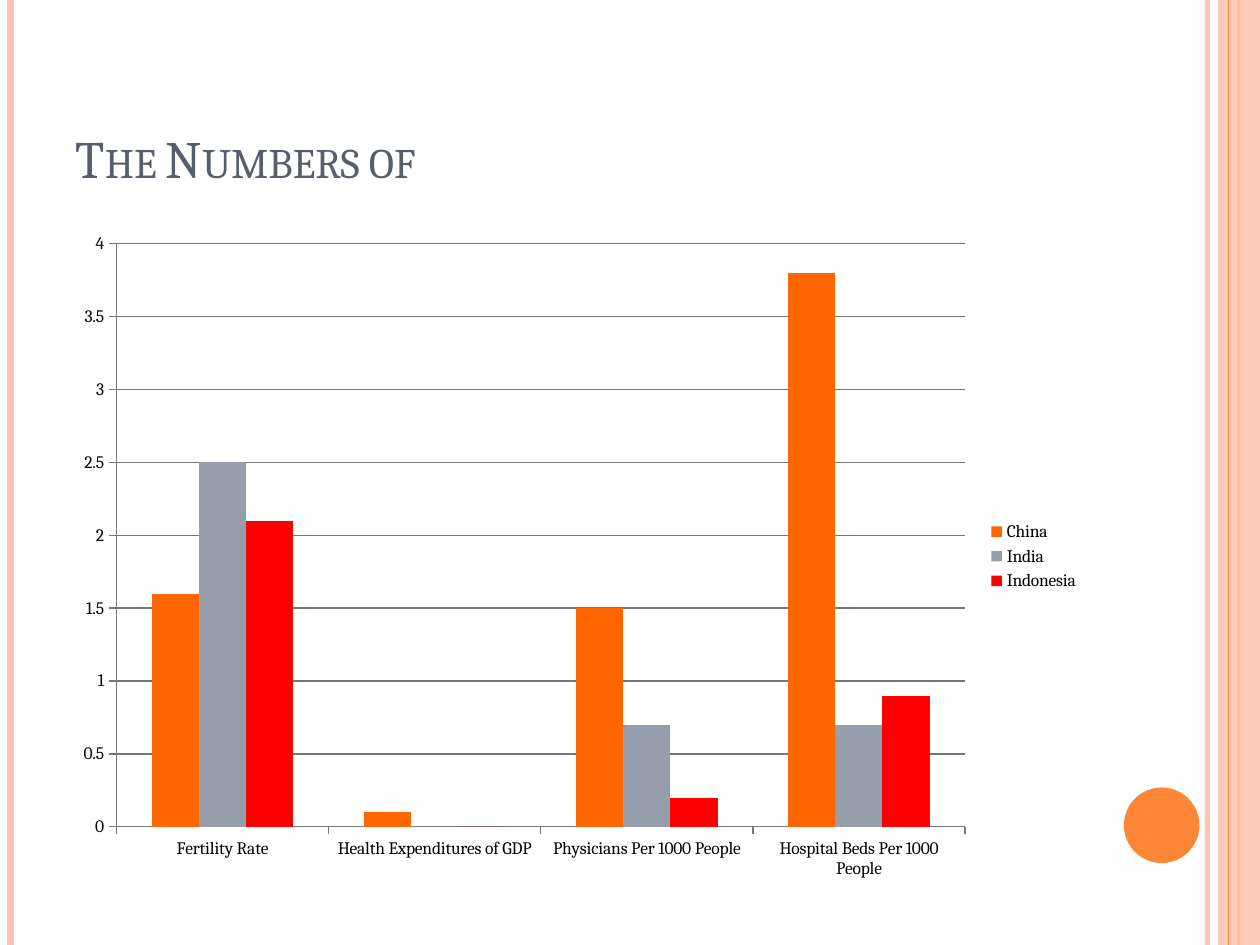
from dataclasses import dataclass
from typing import Optional

from lxml import etree
from pptx import Presentation
from pptx.chart.data import CategoryChartData
from pptx.dml.color import RGBColor
from pptx.enum.chart import XL_CHART_TYPE, XL_LEGEND_POSITION, XL_TICK_MARK
from pptx.enum.shapes import MSO_CONNECTOR, MSO_SHAPE
from pptx.enum.text import MSO_ANCHOR, MSO_AUTO_SIZE, PP_ALIGN
from pptx.oxml.ns import qn
from pptx.util import Pt

COLUMNS = XL_CHART_TYPE.COLUMN_CLUSTERED
LEGEND_RIGHT = XL_LEGEND_POSITION.RIGHT
TICK_OUT, TICK_NONE = XL_TICK_MARK.OUTSIDE, XL_TICK_MARK.NONE
STRAIGHT = MSO_CONNECTOR.STRAIGHT
RECT, OVAL = MSO_SHAPE.RECTANGLE, MSO_SHAPE.OVAL
BOTTOM, LEFT, NO_FIT = MSO_ANCHOR.BOTTOM, PP_ALIGN.LEFT, MSO_AUTO_SIZE.NONE

PEACH = RGBColor(0xFE, 0xC3, 0xAE)
ORANGE = RGBColor(0xFE, 0x86, 0x37)
SLATE = RGBColor(0x57, 0x5F, 0x6D)
BLACK = RGBColor(0, 0, 0)
AXIS_GRAY = RGBColor(0x77, 0x77, 0x77)
CHINA = RGBColor(0xFF, 0x66, 0x00)
INDIA = RGBColor(0x96, 0x9E, 0xAB)
INDONESIA = RGBColor(0xFF, 0, 0)

FONT = "Cambria"
WIDTH, HEIGHT = 720, 540


@dataclass
class Stripe:
    x: float
    weight: float
    color: RGBColor
    opacity: Optional[int] = None


@dataclass
class Block:
    kind: MSO_SHAPE
    x: float
    y: float
    w: float
    h: float
    color: RGBColor
    opacity: Optional[int] = None


@dataclass
class Country:
    name: str
    values: tuple[float, ...]
    color: RGBColor


BACK_STRIPES = [
    Stripe(690, 3, PEACH, 93),
    Stripe(6, 4.5, PEACH),
    Stripe(707.76, 1.5, ORANGE),
]
SIDE_BAND = Block(RECT, 696, 0, 24, HEIGHT, PEACH, 87)
FRONT_STRIPE = Stripe(702, 0.75, ORANGE)
DISC = Block(OVAL, 642.24, 450, 43.2, 43.2, ORANGE)

CATEGORIES = (
    "Fertility Rate",
    "Health Expenditures of GDP",
    "Physicians Per 1000 People",
    "Hospital Beds Per 1000 People",
)
COUNTRIES = [
    Country("China", (1.6, 0.1, 1.5, 3.8), CHINA),
    Country("India", (2.5, 0, 0.7, 0.7), INDIA),
    Country("Indonesia", (2.1, 0, 0.2, 0.9), INDONESIA),
]


def set_opacity(sp_pr, percent: Optional[int]) -> None:
    if percent is not None:
        color = next(sp_pr.iter(qn("a:srgbClr")))
        etree.SubElement(color, qn("a:alpha"), val=str(percent * 1000))


def draw_stripe(slide, stripe: Stripe) -> None:
    line = slide.shapes.add_connector(
        STRAIGHT, Pt(stripe.x), Pt(0), Pt(stripe.x), Pt(HEIGHT))
    line.line.color.rgb = stripe.color
    line.line.width = Pt(stripe.weight)
    sp_pr = line._element.spPr
    set_opacity(sp_pr, stripe.opacity)
    etree.SubElement(sp_pr, qn("a:effectLst"))


def draw_block(slide, block: Block) -> None:
    sp = slide.shapes.add_shape(
        block.kind, Pt(block.x), Pt(block.y), Pt(block.w), Pt(block.h))
    sp.fill.solid()
    sp.fill.fore_color.rgb = block.color
    sp.line.fill.background()
    sp.shadow.inherit = False
    set_opacity(sp._element.spPr, block.opacity)


def set_title(slide, text: str) -> None:
    title = slide.shapes.title
    title.left, title.top = Pt(36), Pt(21.6)
    title.width, title.height = Pt(588), Pt(90)
    tf = title.text_frame
    tf.text = text
    tf.vertical_anchor = BOTTOM
    tf.auto_size = NO_FIT
    p = tf.paragraphs[0]
    p.alignment = LEFT
    p.font.name = FONT
    p.font.size = Pt(30)
    p.font.color.rgb = SLATE
    p.runs[0].font._element.set("cap", "small")


def style_axis(axis) -> None:
    axis.major_tick_mark = TICK_OUT
    axis.minor_tick_mark = TICK_NONE
    axis.format.line.color.rgb = AXIS_GRAY
    axis.format.line.width = Pt(0.75)


def draw_chart(slide) -> None:
    data = CategoryChartData()
    data.categories = CATEGORIES
    for country in COUNTRIES:
        data.add_series(country.name, country.values)
    chart = slide.shapes.add_chart(
        COLUMNS, Pt(36), Pt(126), Pt(588), Pt(383.76), data).chart
    chart.has_title = False
    chart.font.name = FONT
    chart.font.size = Pt(10)
    chart.font.color.rgb = BLACK
    chart.has_legend = True
    chart.legend.position = LEGEND_RIGHT
    chart.legend.include_in_layout = False

    plot = chart.plots[0]
    plot.gap_width = 150
    plot.overlap = 0
    plot.vary_by_categories = False
    for series, country in zip(plot.series, COUNTRIES):
        series.format.fill.solid()
        series.format.fill.fore_color.rgb = country.color

    style_axis(chart.category_axis)
    values = chart.value_axis
    style_axis(values)
    values.minimum_scale, values.maximum_scale = 0, 4
    values.major_unit = 0.5
    values.tick_labels.number_format = "General"
    values.tick_labels.number_format_is_linked = False
    values.has_major_gridlines = True
    grid = values.major_gridlines.format.line
    grid.color.rgb = AXIS_GRAY
    grid.width = Pt(0.75)


def main() -> None:
    prs = Presentation()
    prs.slide_width, prs.slide_height = Pt(WIDTH), Pt(HEIGHT)
    slide = prs.slides.add_slide(prs.slide_layouts[5])
    for stripe in BACK_STRIPES:
        draw_stripe(slide, stripe)
    draw_block(slide, SIDE_BAND)
    draw_stripe(slide, FRONT_STRIPE)
    draw_block(slide, DISC)
    set_title(slide, "The Numbers of")
    draw_chart(slide)
    prs.save("out.pptx")


if __name__ == "__main__":
    main()
